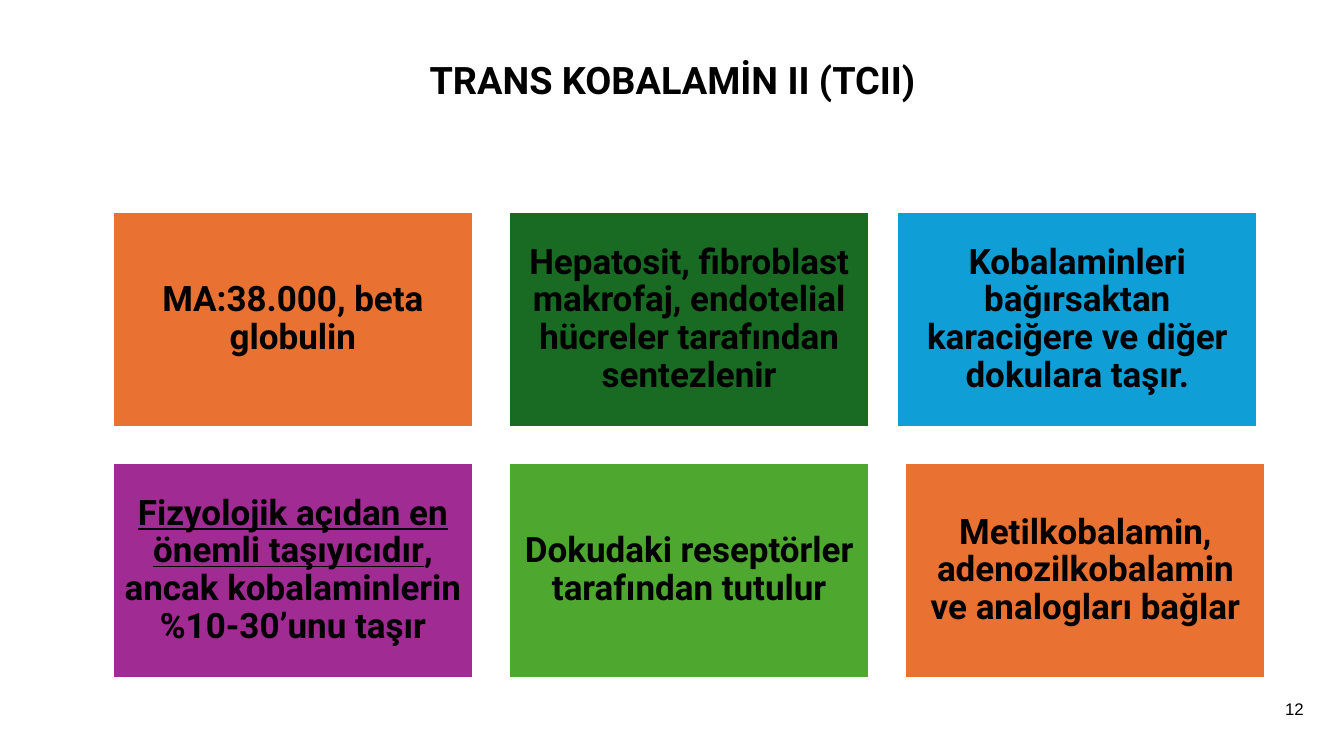
from dataclasses import dataclass

from pptx import Presentation
from pptx.dml.color import RGBColor
from pptx.enum.shapes import MSO_SHAPE
from pptx.enum.text import MSO_ANCHOR, PP_ALIGN
from pptx.slide import Slide
from pptx.text.text import TextFrame
from pptx.util import Inches, Pt

RECTANGLE = MSO_SHAPE.RECTANGLE
MIDDLE = MSO_ANCHOR.MIDDLE
CENTER, RIGHT = PP_ALIGN.CENTER, PP_ALIGN.RIGHT

BLACK = RGBColor(0x00, 0x00, 0x00)
WHITE = RGBColor(0xFF, 0xFF, 0xFF)
ORANGE = RGBColor(0xE9, 0x71, 0x32)
DARK_GREEN = RGBColor(0x19, 0x6B, 0x24)
BLUE = RGBColor(0x0F, 0x9E, 0xD5)
PURPLE = RGBColor(0xA0, 0x2B, 0x93)
GREEN = RGBColor(0x4E, 0xA7, 0x2E)

COLUMNS = 3
GRID_LEFT, GRID_TOP = 1.12, 2.1
COLUMN_STEP, ROW_STEP = 3.93, 2.49
CARD_WIDTH, CARD_HEIGHT = 3.57, 2.14


@dataclass(frozen=True)
class Card:
    text: str
    fill: RGBColor
    underlined: str = ""
    shift_left: float = 0


CARDS = (
    Card("MA:38.000, beta globulin", ORANGE),
    Card("Hepatosit, fibroblast makrofaj, endotelial hücreler tarafından sentezlenir", DARK_GREEN),
    Card("Kobalaminleri bağırsaktan karaciğere ve diğer dokulara taşır.", BLUE, shift_left=0.08),
    Card(", ancak kobalaminlerin %10-30’unu taşır", PURPLE,
         underlined="Fizyolojik açıdan en önemli taşıyıcıdır"),
    Card("Dokudaki reseptörler tarafından tutulur", GREEN),
    Card("Metilkobalamin, adenozilkobalamin ve analogları bağlar", ORANGE),
)


def write_text(frame: TextFrame, text: str, size: float, font_name: str = "Roboto",
               bold: bool = True, alignment: PP_ALIGN = CENTER, underlined: str = "") -> None:
    """Fill the frame with one paragraph, led by an underlined part if given."""
    frame.word_wrap = True
    frame.vertical_anchor = MIDDLE
    paragraph = frame.paragraphs[0]
    paragraph.alignment = alignment
    if underlined:
        run = paragraph.add_run()
        run.text = underlined
        run.font.underline = True
    paragraph.add_run().text = text
    font = paragraph.font
    font.name, font.size, font.bold = font_name, Pt(size), bold
    font.color.rgb = BLACK


def add_text(slide: Slide, left: float, top: float, width: float, height: float) -> TextFrame:
    """Add a text box and return its frame."""
    return slide.shapes.add_textbox(
        Inches(left), Inches(top), Inches(width), Inches(height)).text_frame


def add_card(slide: Slide, card: Card, index: int) -> None:
    row, column = divmod(index, COLUMNS)
    shape = slide.shapes.add_shape(
        RECTANGLE,
        Inches(GRID_LEFT + column * COLUMN_STEP - card.shift_left),
        Inches(GRID_TOP + row * ROW_STEP),
        Inches(CARD_WIDTH), Inches(CARD_HEIGHT))
    shape.shadow.inherit = False
    shape.fill.solid()
    shape.fill.fore_color.rgb = card.fill
    shape.line.color.rgb = WHITE
    shape.line.width = Pt(1.5)
    frame = shape.text_frame
    frame.margin_left = frame.margin_right = Inches(0.1)
    frame.margin_top = frame.margin_bottom = Inches(0.1)
    write_text(frame, card.text, 25, underlined=card.underlined)
    frame.paragraphs[0].line_spacing = 0.9


def main() -> None:
    presentation = Presentation()
    presentation.slide_width, presentation.slide_height = Inches(13.33), Inches(7.5)
    slide = presentation.slides.add_slide(presentation.slide_layouts[6])

    title = add_text(slide, 1.13, 0.52, 11.08, 0.54)
    write_text(title, "TRANS KOBALAMİN II (TCII)", 27)
    for index, card in enumerate(CARDS):
        add_card(slide, card, index)
    page_number = add_text(slide, 12.46, 6.83, 0.57, 0.4)
    write_text(page_number, "12", 12, font_name="Arial", bold=False, alignment=RIGHT)

    presentation.save("out.pptx")


if __name__ == "__main__":
    main()
